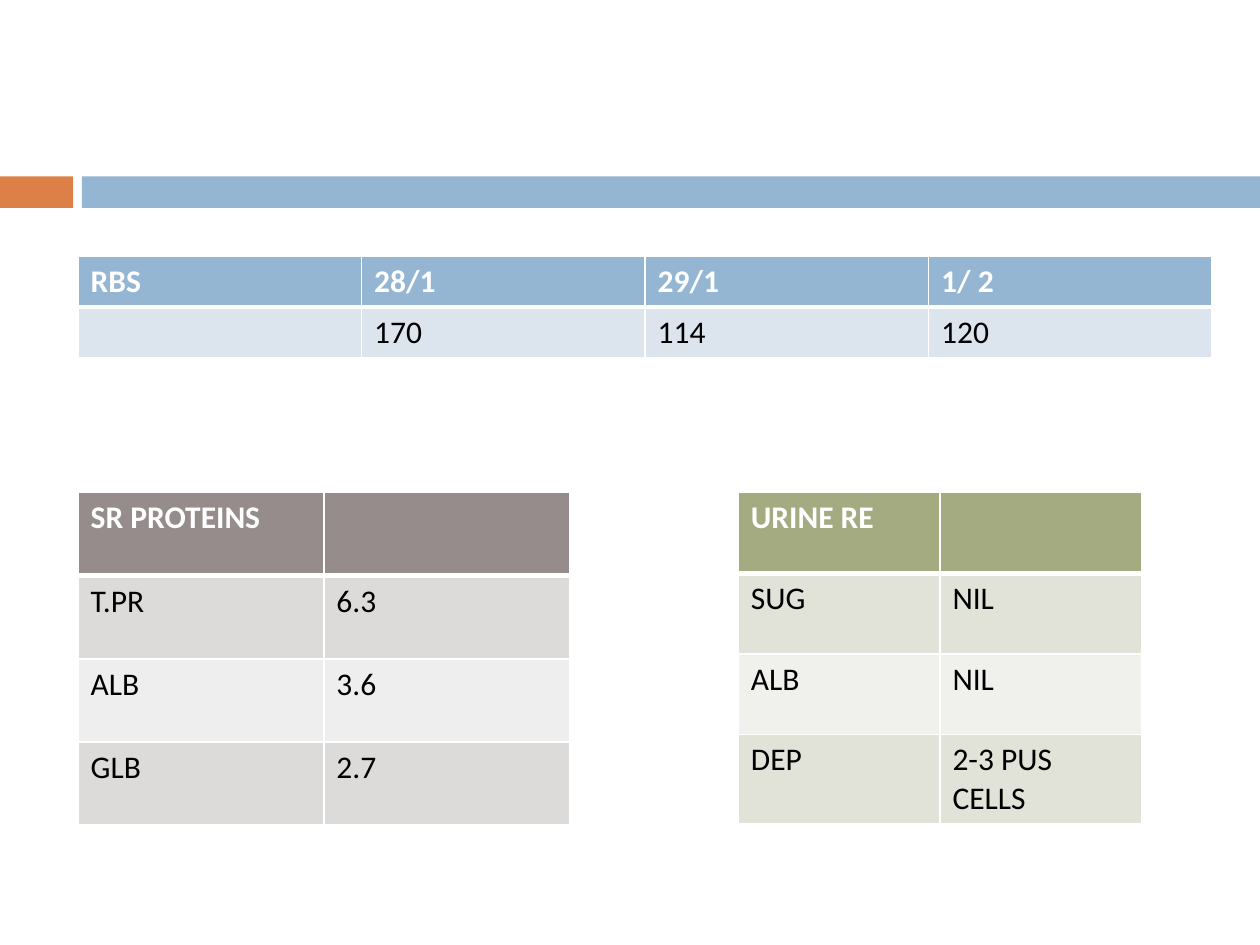
from lxml.etree import SubElement
from pptx import Presentation
from pptx.dml.color import RGBColor
from pptx.enum.shapes import MSO_SHAPE as Shape
from pptx.oxml.ns import qn
from pptx.util import Inches, Pt

COLORS = {
    "white": "FFFFFF", "black": "000000",
    "orange": "DD8047", "blue": "94B6D2", "blue_band": "DCE5EE",
    "taupe": "968C8C", "taupe_band": "DDDADA", "taupe_light": "EFEEEE",
    "olive": "A5AB81", "olive_band": "E1E2D8", "olive_light": "F0F1ED",
}


class LabSlide:
    font_name = "Calibri"
    font_size = Pt(18)

    def __init__(self, slide):
        self.slide = slide

    def paint(self, fill, color):
        fill.solid()
        fill.fore_color.rgb = RGBColor.from_string(COLORS[color])

    def bar(self, left, top, width, height, color):
        bar = self.slide.shapes.add_shape(
            Shape.RECTANGLE, Inches(left), Inches(top), Inches(width), Inches(height))
        bar.shadow.inherit = False
        bar.line.fill.background()
        self.paint(bar.fill, color)

    def borders(self, cell, top, bottom):
        properties = cell._tc.get_or_add_tcPr()
        for side, width in (("L", 1), ("R", 1), ("T", top), ("B", bottom)):
            line = SubElement(properties, qn(f"a:ln{side}"), w=str(Pt(width)))
            solid = SubElement(line, qn("a:solidFill"))
            SubElement(solid, qn("a:srgbClr"), val=COLORS["white"])

    def table(self, left, top, column_width, row_height, rows, header, bands):
        count = len(rows[0])
        table = self.slide.shapes.add_table(
            len(rows), count, Inches(left), Inches(top),
            Inches(column_width * count), Inches(row_height * len(rows))).table
        for column in table.columns:
            column.width = Inches(column_width)
        for r, values in enumerate(rows):
            table.rows[r].height = Inches(row_height)
            for c, value in enumerate(values):
                cell = table.cell(r, c)
                # A thick rule parts the header from the body
                self.borders(cell, 3 if r == 1 else 1, 3 if r == 0 else 1)
                self.paint(cell.fill, bands[(r - 1) % len(bands)] if r else header)
                cell.text = value
                font = cell.text_frame.paragraphs[0].font
                font.name, font.size, font.bold = self.font_name, self.font_size, r == 0
                self.paint(font.fill, "black" if r else "white")


def main():
    deck = Presentation()
    deck.slide_width, deck.slide_height = Inches(10), Inches(7.5)
    labs = LabSlide(deck.slides.add_slide(deck.slide_layouts[6]))

    # Title band
    labs.bar(0, 1.4, 0.58, 0.25, "orange")
    labs.bar(0.65, 1.4, 9.35, 0.25, "blue")

    # Blood sugar by date
    labs.table(0.62, 2.03, 2.25, 0.4,
               [("RBS", "28/1", "29/1", "1/ 2"), ("", "170", "114", "120")],
               "blue", ["blue_band"])

    # Serum proteins
    labs.table(0.62, 3.91, 1.95, 0.66,
               [("SR PROTEINS", ""), ("T.PR", "6.3"), ("ALB", "3.6"), ("GLB", "2.7")],
               "taupe", ["taupe_band", "taupe_light"])

    # Urine examination
    labs.table(5.86, 3.91, 1.6, 0.64,
               [("URINE RE", ""), ("SUG", "NIL"), ("ALB", "NIL"), ("DEP", "2-3 PUS CELLS")],
               "olive", ["olive_band", "olive_light"])

    deck.save("out.pptx")


if __name__ == "__main__":
    main()
